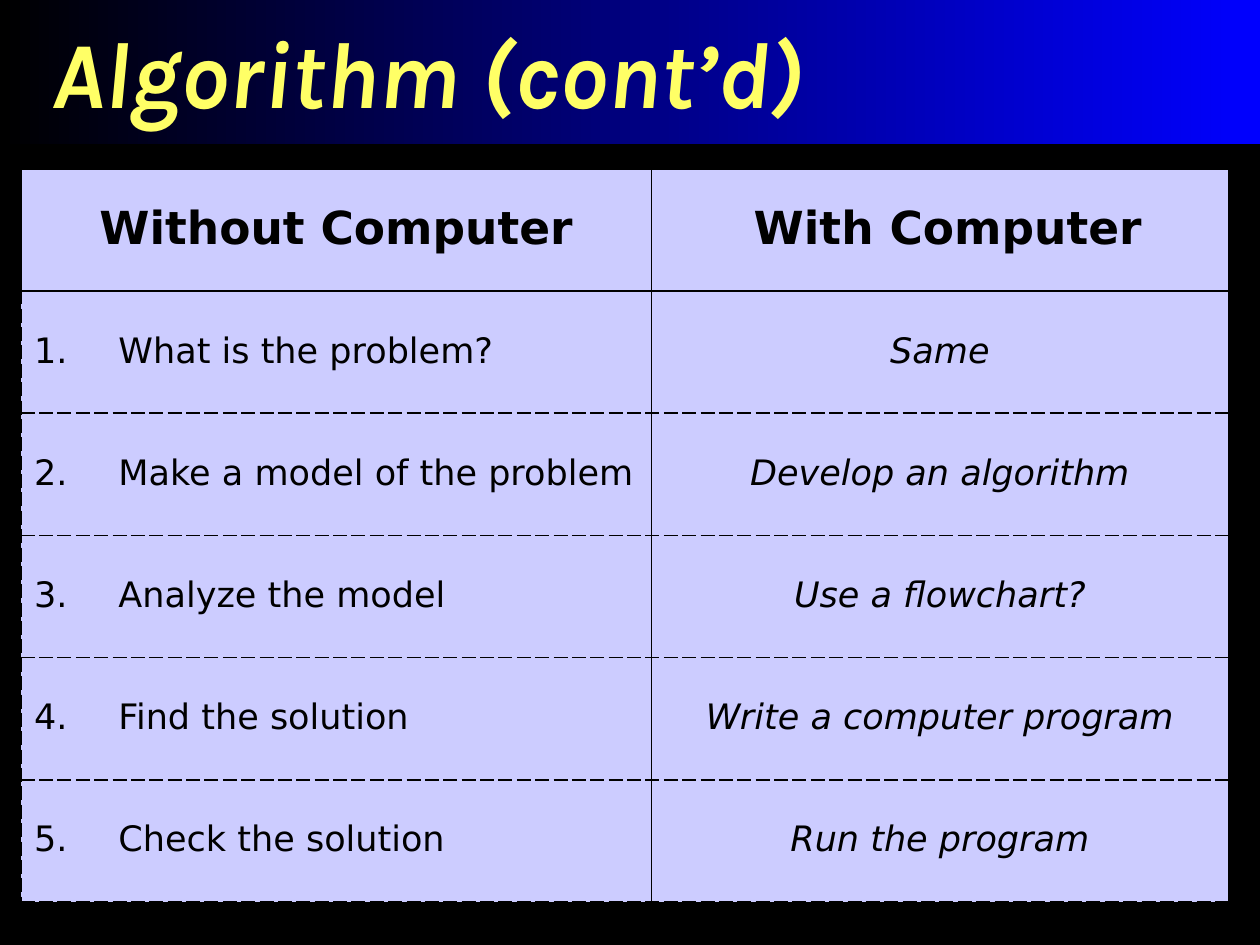
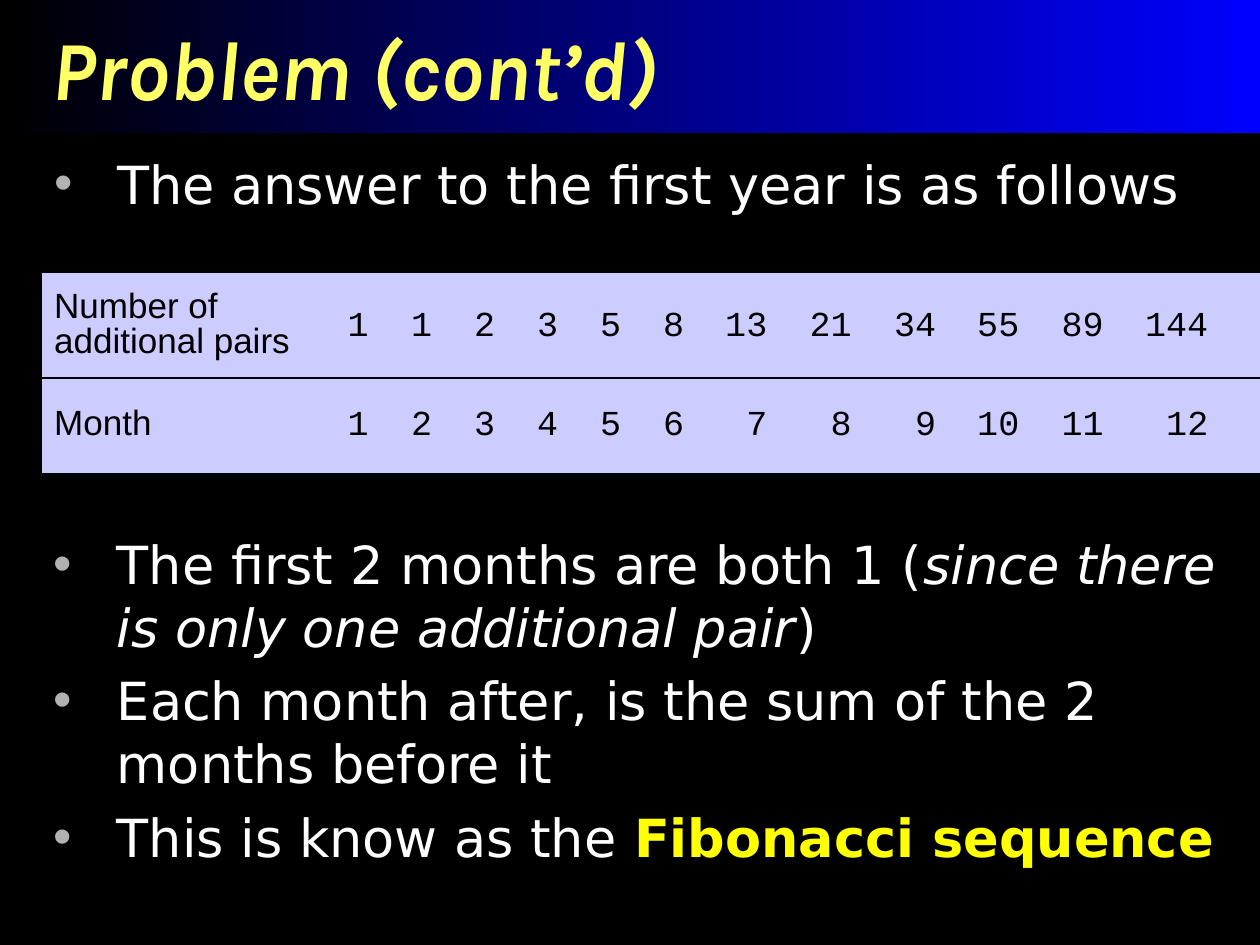
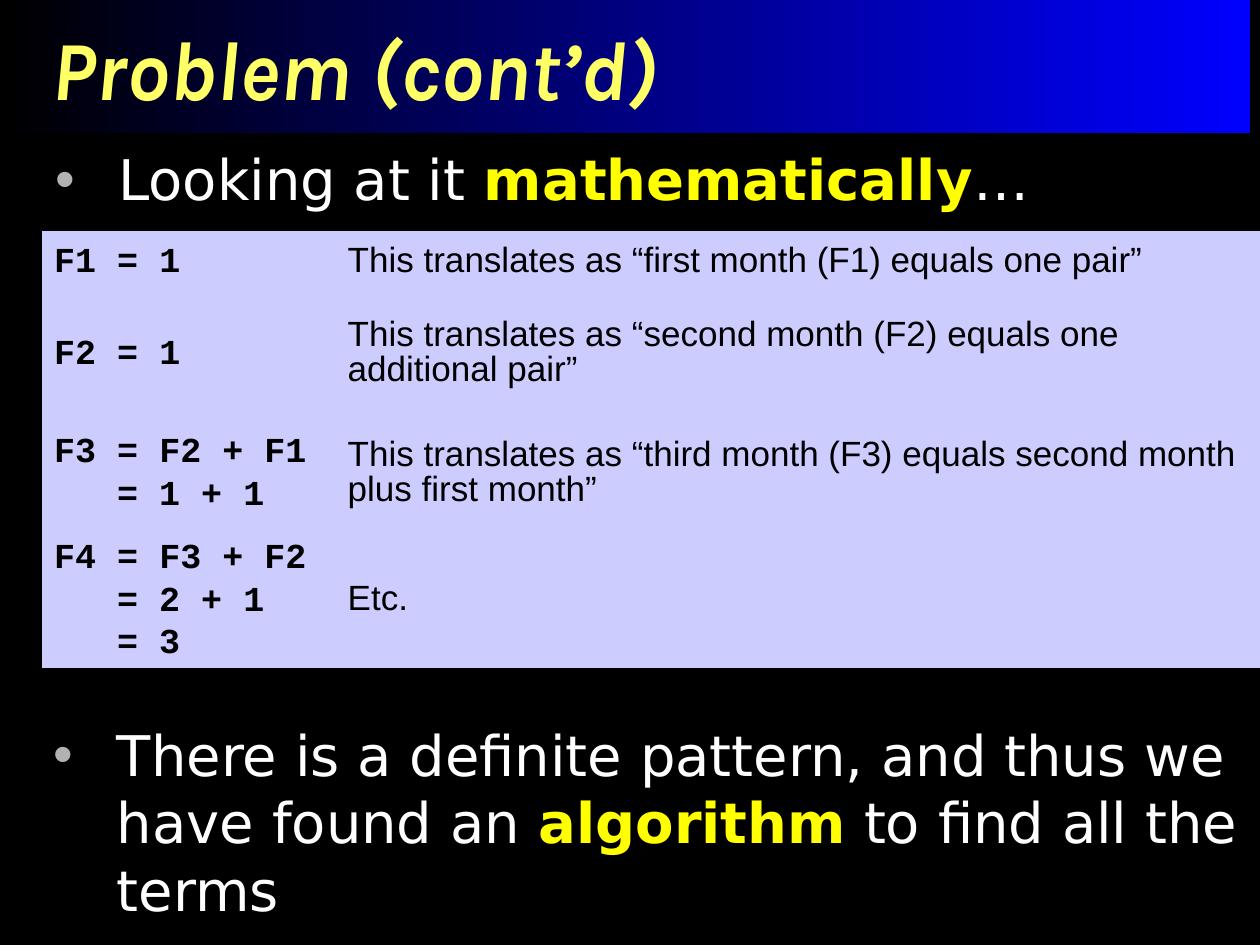
from lxml.etree import SubElement
from pptx import Presentation
from pptx.dml.color import RGBColor
from pptx.enum.text import MSO_ANCHOR, MSO_AUTO_SIZE, PP_ALIGN
from pptx.oxml import parse_xml
from pptx.oxml.ns import nsdecls, qn
from pptx.util import Inches, Pt

# Shared colours and fonts
BLACK = RGBColor(0x00, 0x00, 0x00)
BLUE = RGBColor(0x00, 0x00, 0xFF)
WHITE = RGBColor(0xFF, 0xFF, 0xFF)
TITLE_YELLOW = RGBColor(0xFF, 0xFF, 0x66)
KEY_YELLOW = RGBColor(0xFF, 0xFF, 0x00)
BULLET_GREY = RGBColor(0xB2, 0xB2, 0xB2)
LILAC = RGBColor(0xCC, 0xCC, 0xFF)
TITLE_FONT, BODY_FONT, CELL_FONT, CODE_FONT = "Karla", "DejaVu Sans", "Arial", "Courier New"

TITLE_AND_BODY, TITLE_ONLY = 1, 5
SIDES = ("L", "R", "T", "B")
COURIER_WIDTH = 1 / 6  # inches per character at 20 points


def place(shape, box):
    shape.left, shape.top, shape.width, shape.height = (Inches(length) for length in box)


def format_span(span, size, name, color, bold=False, italic=False):
    font = span.font
    font.size, font.name = Pt(size), name
    font.bold, font.italic = bold, italic
    font.color.rgb = color


def set_marker(para, tag, color, indent, **attributes):
    """Give a paragraph a hanging bullet or number."""
    properties = para._p.get_or_add_pPr()
    properties.set("marL", str(Inches(indent)))
    properties.set("indent", str(-Inches(indent)))
    bullet_color = SubElement(properties, qn("a:buClr"))
    SubElement(bullet_color, qn("a:srgbClr"), val=str(color))
    if tag == "a:buChar":
        SubElement(properties, qn("a:buFont"), typeface="Arial")
    SubElement(properties, qn(tag), **attributes)


def set_right_tabs(para, positions):
    tabs = SubElement(para._p.get_or_add_pPr(), qn("a:tabLst"))
    for position in positions:
        SubElement(tabs, qn("a:tab"), pos=str(Inches(position)), algn="r")


# Title band
def add_title(page, text, size, box):
    title = page.shapes.title
    place(title, box)
    title.fill.gradient()
    title.fill.gradient_angle = 0
    for stop, color, position in zip(title.fill.gradient_stops, (BLACK, BLUE), (0, 1)):
        stop.color.rgb = color
        stop.position = position
    frame = title.text_frame
    frame.text = text
    frame.auto_size = MSO_AUTO_SIZE.NONE
    frame.vertical_anchor = MSO_ANCHOR.MIDDLE
    frame.margin_left, frame.margin_right = Inches(0.41), Inches(0.14)
    frame.margin_top = frame.margin_bottom = Inches(0.13)
    para = frame.paragraphs[0]
    para.alignment = PP_ALIGN.LEFT
    format_span(para.runs[0], size, TITLE_FONT, TITLE_YELLOW, bold=True, italic=True)


# Bulleted text; each item is a list of (text, style) pairs
def fill_bullets(shape, items, size, line_spacing=1.0):
    styles = {
        "plain": {"color": WHITE},
        "italic": {"color": WHITE, "italic": True},
        "key": {"color": KEY_YELLOW, "bold": True},
    }
    frame = shape.text_frame
    frame.word_wrap = True
    frame.auto_size = MSO_AUTO_SIZE.NONE
    frame.vertical_anchor = MSO_ANCHOR.TOP
    for index, item in enumerate(items):
        para = frame.add_paragraph() if index else frame.paragraphs[0]
        set_marker(para, "a:buChar", BULLET_GREY, 0.5, char="•")
        para.line_spacing = line_spacing
        para.space_before = Pt(size * 0.2 if index else 0)
        for text, style in item:
            span = para.add_run()
            span.text = text
            format_span(span, size, BODY_FONT, **styles[style])


def add_body(page, box, items, size, line_spacing):
    body = page.placeholders[1]
    place(body, box)
    fill_bullets(body, items, size, line_spacing)


def add_bullet_box(page, box, items, size):
    fill_bullets(page.shapes.add_textbox(*(Inches(length) for length in box)), items, size)


# Tables
def set_borders(cell, **dashes):
    """Draw the sides named in dashes; leave the others bare."""
    properties = cell._tc.get_or_add_tcPr()
    for index, side in enumerate(SIDES):
        if side in dashes:
            content = (f'<a:solidFill><a:srgbClr val="{BLACK}"/></a:solidFill>'
                       f'<a:prstDash val="{dashes[side]}"/>')
        else:
            content = "<a:noFill/>"
        line = parse_xml(f'<a:ln{side} {nsdecls("a")} w="{Pt(1)}">{content}</a:ln{side}>')
        properties.insert(index, line)


def add_plain_table(page, left, top, widths, heights):
    table = page.shapes.add_table(
        len(heights), len(widths), Inches(left), Inches(top),
        Inches(sum(widths)), Inches(sum(heights))).table
    table.first_row = table.horz_banding = False
    for column, width in zip(table.columns, widths):
        column.width = Inches(width)
    for row, height in zip(table.rows, heights):
        row.height = Inches(height)
    for cell in table.iter_cells():
        cell.fill.solid()
        cell.fill.fore_color.rgb = LILAC
        cell.vertical_anchor = MSO_ANCHOR.MIDDLE
    return table


def fill_cell(cell, text, name, size=20, align=PP_ALIGN.LEFT, **emphasis):
    cell.text_frame.text = text
    for index, para in enumerate(cell.text_frame.paragraphs):
        para.alignment = align
        para.line_spacing = 0.9
        para.space_before = Pt(size * 0.2 if index else 0)
        format_span(para.runs[0], size, name, BLACK, **emphasis)


def add_comparison_table(page, left, top, headings, steps):
    row_count = len(steps) + 1
    table = add_plain_table(page, left, top, (5, 4.58), [0.97] * row_count)
    for column, heading in enumerate(headings):
        cell = table.cell(0, column)
        fill_cell(cell, heading, BODY_FONT, 26, PP_ALIGN.CENTER, bold=True)
        set_borders(cell, **dict.fromkeys(SIDES, "solid"))
    for number, (without, using) in enumerate(steps, start=1):
        step, answer = table.cell(number, 0), table.cell(number, 1)
        fill_cell(step, without, BODY_FONT)
        set_marker(step.text_frame.paragraphs[0], "a:buAutoNum", BLACK, 0.67,
                   type="arabicPeriod", startAt=str(number))
        fill_cell(answer, using, BODY_FONT, align=PP_ALIGN.CENTER, italic=True)
        above = "solid" if number == 1 else "sysDash"
        set_borders(step, L="sysDash", R="solid", T=above, B="sysDash")
        set_borders(answer, L="solid", R="solid", T=above, B="sysDash")


def add_sequence_table(page, left, top, rows):
    table = add_plain_table(page, left, top, (2.33, 7.34), (0.83, 0.75))
    # Right-aligned stops: two characters of gap, then the width of the top number
    stops, end = [], -2
    for value in rows[0][1]:
        end += 2 + len(str(value))
        stops.append(round(end * COURIER_WIDTH, 2))
    for index, (label, values) in enumerate(rows):
        label_cell, values_cell = table.cell(index, 0), table.cell(index, 1)
        fill_cell(label_cell, label, CELL_FONT)
        fill_cell(values_cell, "\t".join(str(value) for value in values), CODE_FONT)
        set_right_tabs(values_cell.text_frame.paragraphs[0], stops[1:])
        divider = {"T" if index else "B": "solid"}
        set_borders(label_cell, **divider)
        set_borders(values_cell, **divider)


def add_formula_table(page, left, top, rows):
    table = add_plain_table(page, left, top, (2.33, 7.34), (0.5, 0.95, 0.95, 1.07))
    for index, (formula, meaning) in enumerate(rows):
        formula_cell, meaning_cell = table.cell(index, 0), table.cell(index, 1)
        fill_cell(formula_cell, formula, CODE_FONT, bold=True)
        # Later lines start under the first equals sign
        for para in formula_cell.text_frame.paragraphs[1:]:
            para._p.get_or_add_pPr().set("marL", str(Inches(0.5)))
        fill_cell(meaning_cell, meaning, CELL_FONT)
        set_borders(formula_cell)
        set_borders(meaning_cell)


# Slides
def build_algorithm_page(deck):
    page = deck.slides.add_slide(deck.slide_layouts[TITLE_ONLY])
    add_title(page, "Algorithm (cont’d)", 54, (0, -0.02, 10, 1.16))
    add_comparison_table(page, 0.17, 1.34, ("Without Computer", " With Computer"), [
        ("What is the problem?", "Same"),
        ("Make a model of the problem", "Develop an algorithm"),
        ("Analyze the model", "Use a flowchart?"),
        ("Find the solution", "Write a computer program"),
        ("Check the solution", "Run the program"),
    ])


def build_sequence_page(deck):
    page = deck.slides.add_slide(deck.slide_layouts[TITLE_AND_BODY])
    add_title(page, "Problem (cont’d)", 48, (0, 0, 10, 1.06))
    add_body(page, (0.33, 1.25, 9.67, 0.75),
             [[("The answer to the first year is as follows", "plain")]], 30, 0.8)
    add_sequence_table(page, 0.33, 2.17, [
        ("Number of additional pairs", (1, 1, 2, 3, 5, 8, 13, 21, 34, 55, 89, 144)),
        ("Month", range(1, 13)),
    ])
    add_bullet_box(page, (0.33, 4.17, 9.67, 3.33), [
        [("The first 2 months are both 1 (", "plain"),
         ("since there is only one additional pair", "italic"), (")", "plain")],
        [("Each month after, is the sum of the 2 months before it", "plain")],
        [("This is know as the ", "plain"), ("Fibonacci sequence", "key")],
    ], 30)


def build_formula_page(deck):
    page = deck.slides.add_slide(deck.slide_layouts[TITLE_AND_BODY])
    add_title(page, "Problem (cont’d)", 48, (0, 0, 9.92, 1.06))
    add_body(page, (0.34, 1.16, 9.66, 0.75),
             [[("Looking at it ", "plain"), ("mathematically", "key"), ("…", "plain")]], 32, 0.9)
    add_formula_table(page, 0.33, 1.83, [
        ("F1 = 1", "This translates as “first month (F1) equals one pair”"),
        ("F2 = 1", "This translates as “second month (F2) equals one additional pair”"),
        ("F3 = F2 + F1\n= 1 + 1",
         "This translates as “third month (F3) equals second month plus first month”"),
        ("F4 = F3 + F2\n= 2 + 1\n= 3", "Etc."),
    ])
    add_bullet_box(page, (0.33, 5.67, 9.67, 1.67), [
        [("There is a definite pattern, and thus we have found an ", "plain"),
         ("algorithm", "key"), (" to find all the terms", "plain")],
    ], 32)


def main():
    deck = Presentation()
    deck.slide_width, deck.slide_height = Inches(10), Inches(7.5)
    background = deck.slide_master.background.fill
    background.solid()
    background.fore_color.rgb = BLACK
    build_algorithm_page(deck)
    build_sequence_page(deck)
    build_formula_page(deck)
    deck.save("out.pptx")


if __name__ == "__main__":
    main()
